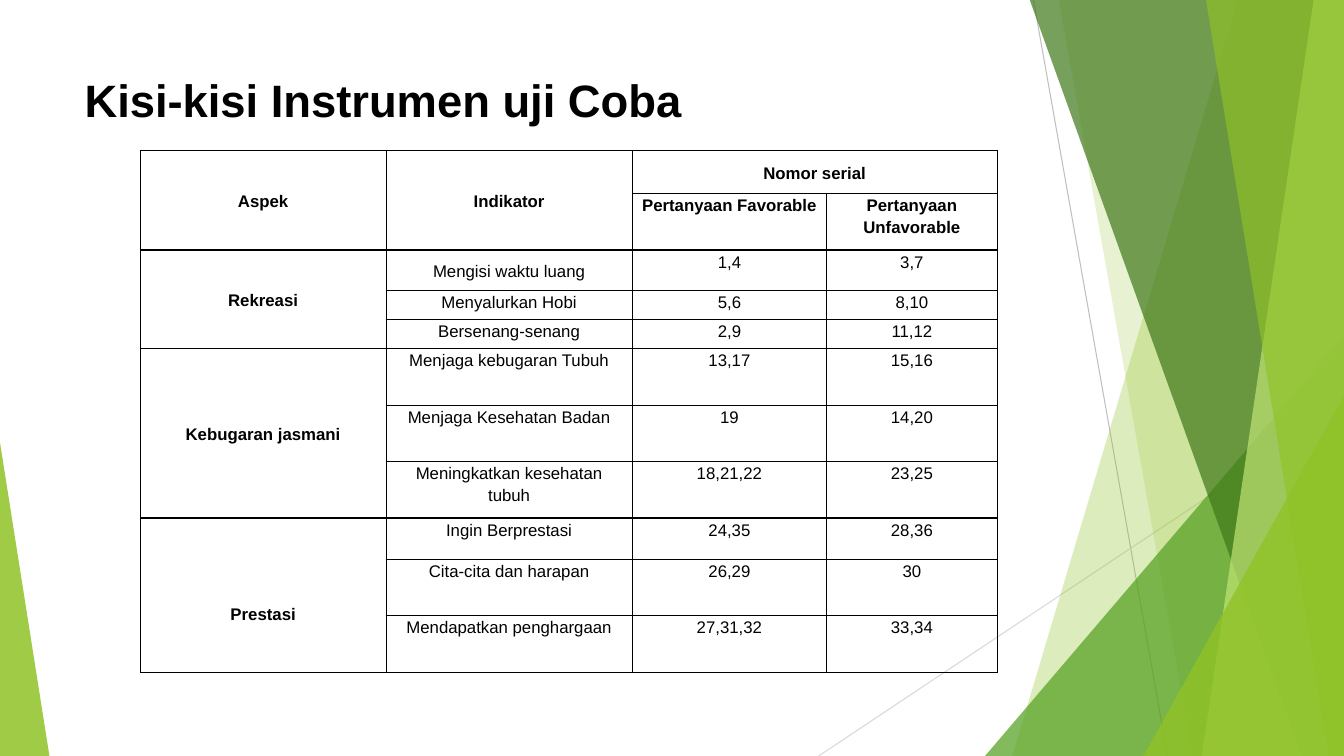
from lxml.etree import SubElement
from pptx import Presentation
from pptx.dml.color import RGBColor as RGB
from pptx.enum.shapes import MSO_CONNECTOR as Conn, MSO_SHAPE as Kind
from pptx.enum.text import MSO_ANCHOR as Anchor, PP_ALIGN as Align
from pptx.oxml import parse_xml
from pptx.oxml.ns import nsdecls, qn
from pptx.util import Inches, Pt

WIDE, HIGH = 13.33, 7.5
BLACK = RGB(0, 0, 0)
GREY, PALE = RGB(0xBF, 0xBF, 0xBF), RGB(0xD9, 0xD9, 0xD9)
LIME, GREEN = RGB(0x90, 0xC2, 0x26), RGB(0x54, 0xA0, 0x21)
DARK, LIGHT = RGB(0x3F, 0x78, 0x19), RGB(0xC0, 0xE4, 0x74)

TITLE = "Kisi-kisi Instrumen uji Coba"
HEAD = [
    ("Aspek", "Indikator", "Nomor serial", ""),
    ("", "", "Pertanyaan Favorable", "Pertanyaan Unfavorable"),
]
GROUPS = {
    "Rekreasi": [
        ("Mengisi waktu luang", "1,4", "3,7"),
        ("Menyalurkan Hobi", "5,6", "8,10"),
        ("Bersenang-senang", "2,9", "11,12"),
    ],
    "Kebugaran jasmani": [
        ("Menjaga kebugaran Tubuh", "13,17", "15,16"),
        ("Menjaga Kesehatan Badan", "19", "14,20"),
        ("Meningkatkan kesehatan tubuh", "18,21,22", "23,25"),
    ],
    "Prestasi": [
        ("Ingin Berprestasi", "24,35", "28,36"),
        ("Cita-cita dan harapan", "26,29", "30"),
        ("Mendapatkan penghargaan", "27,31,32", "33,34"),
    ],
}
COLS = (2.44, 2.44, 1.93, 1.69)
ROWS = (0.43, 0.56, 0.4, 0.29, 0.29, 0.56, 0.56, 0.56, 0.41, 0.56, 0.56)
MIDDLE = {(0, 0), (0, 1), (0, 2), (2, 0), (2, 1), (5, 0), (8, 0)}

LINES = [((10.25, 0), (11.58, HIGH), GREY), ((WIDE, 4.03), (8.12, HIGH), PALE)]
BLADES = [
    ("band", 12.28, 10.04, LIME, 30),
    ("band", 10.5, 11.83, LIME, 20),
    ("peak", 9.77, 3.33, GREEN, 72),
    ("band", 10.21, 12.91, DARK, 70),
    ("band", 13.03, 11.92, LIGHT, 70),
    ("band", 11.96, 13.18, LIME, 65),
    ("peak", 11.34, 3.93, LIME, 80),
    ("edge", 0.49, 4.39, LIME, 85),
]


def tint(shape, color, alpha):
    shape.shadow.inherit = False
    shape.fill.solid()
    shape.fill.fore_color.rgb = color
    shape.line.fill.background()
    tone = shape.fill._xPr.find(".//" + qn("a:srgbClr"))
    SubElement(tone, qn("a:alpha"), val=str(alpha * 1000))


def band(shapes, top, foot):
    pen = shapes.build_freeform(Inches(top), Inches(-0.01), 1.0)
    ends = [(WIDE, -0.01), (WIDE, HIGH), (foot, HIGH)]
    pen.add_line_segments([(Inches(x), Inches(y)) for x, y in ends])
    return pen.convert_to_shape()


def peak(shapes, left, right, top, tip):
    box = [Inches(n) for n in (left, top, right - left, HIGH - top)]
    shape = shapes.add_shape(Kind.ISOSCELES_TRIANGLE, *box)
    shape.adjustments[0] = tip
    return shape


def backdrop(shapes):
    for (x1, y1), (x2, y2), color in LINES:
        ends = [Inches(n) for n in (x1, y1, x2, y2)]
        line = shapes.add_connector(Conn.STRAIGHT, *ends)
        line.line.color.rgb = color
        line.line.width = Pt(0.75)
        SubElement(line._element.spPr, qn("a:effectLst"))
    for kind, a, b, color, alpha in BLADES:
        if kind == "band":
            shape = band(shapes, a, b)
        elif kind == "peak":
            shape = peak(shapes, a, WIDE, b, 1)
        else:
            shape = peak(shapes, 0, a, b, 0)
        tint(shape, color, alpha)


def style(par, size, bold):
    for run in par.runs:
        font = run.font
        font.name, font.size, font.bold = "Arial", Pt(size), bold
        font.color.rgb = BLACK


def heading(shapes):
    box = shapes.add_textbox(Inches(0.74), Inches(0.67), Inches(9.4), Inches(0.9))
    frame = box.text_frame
    frame.word_wrap = True
    frame.text = TITLE
    style(frame.paragraphs[0], 32.4, True)


def dress(cell, text, bold, middle):
    cell.text_frame.text = text
    cell.margin_left = cell.margin_right = Inches(0.07)
    cell.margin_top = cell.margin_bottom = 0
    cell.vertical_anchor = Anchor.MIDDLE if middle else Anchor.TOP
    par = cell.text_frame.paragraphs[0]
    par.alignment, par.line_spacing = Align.CENTER, 1.15
    style(par, 12, bold)
    cell.fill.background()
    props = cell._tc.get_or_add_tcPr()
    for spot, side in enumerate("LRTB"):
        props.insert(spot, parse_xml(
            f'<a:ln{side} {nsdecls("a")} w="{Pt(1)}"><a:solidFill>'
            f'<a:srgbClr val="{BLACK}"/></a:solidFill></a:ln{side}>'))


def grid(shapes):
    data = HEAD + [
        (name if i == 0 else "", *row)
        for name, rows in GROUPS.items() for i, row in enumerate(rows)]
    box = [Inches(n) for n in (1.39, 1.49, sum(COLS), sum(ROWS))]
    table = shapes.add_table(len(ROWS), len(COLS), *box).table
    table.first_row = table.horz_banding = False
    for col, size in zip(table.columns, COLS):
        col.width = Inches(size)
    for row, size in zip(table.rows, ROWS):
        row.height = Inches(size)
    for r, row in enumerate(data):
        for c, text in enumerate(row):
            bold = r < len(HEAD) or c == 0
            dress(table.cell(r, c), text, bold, (r, c) in MIDDLE)
    for c in (0, 1):
        table.cell(0, c).merge(table.cell(1, c))
    table.cell(0, 2).merge(table.cell(0, 3))
    for r in (2, 5, 8):
        table.cell(r, 0).merge(table.cell(r + 2, 0))
    table.cell(8, 0).margin_top = Inches(0.36)


def main():
    """Build the slide with the instrument grid."""
    deck = Presentation()
    deck.slide_width, deck.slide_height = Inches(WIDE), Inches(HIGH)
    shapes = deck.slides.add_slide(deck.slide_layouts[6]).shapes
    backdrop(shapes)
    heading(shapes)
    grid(shapes)
    deck.save("out.pptx")


if __name__ == "__main__":
    main()
